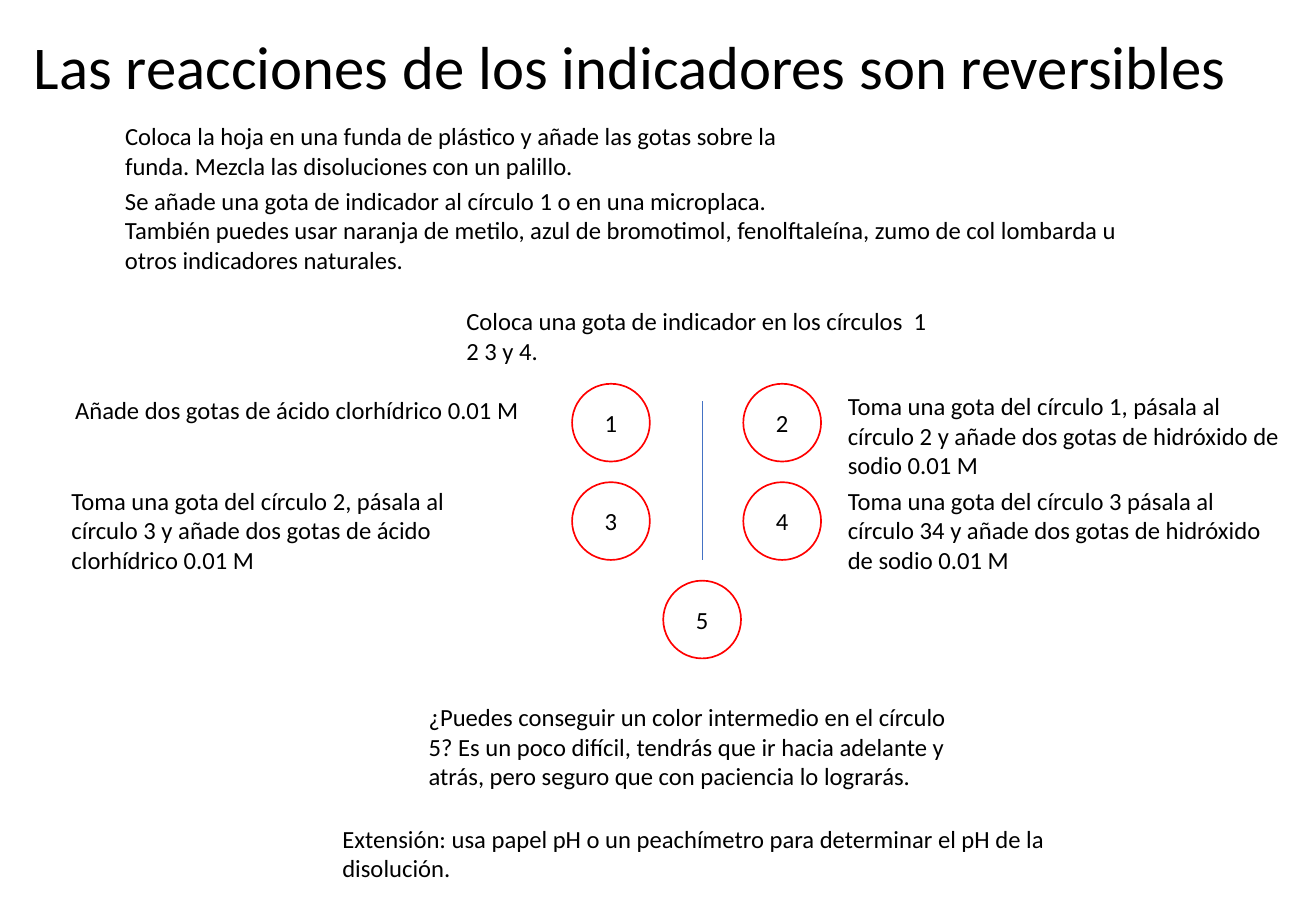
from dataclasses import dataclass

from lxml import etree
from pptx import Presentation
from pptx.dml.color import RGBColor
from pptx.enum.shapes import MSO_CONNECTOR, MSO_SHAPE
from pptx.enum.text import MSO_ANCHOR, PP_ALIGN
from pptx.oxml.ns import qn
from pptx.slide import Slide
from pptx.text.text import TextFrame
from pptx.util import Pt

LINE = MSO_CONNECTOR.STRAIGHT
OVAL = MSO_SHAPE.OVAL
MIDDLE, TOP = MSO_ANCHOR.MIDDLE, MSO_ANCHOR.TOP
CENTER, LEFT = PP_ALIGN.CENTER, PP_ALIGN.LEFT


@dataclass(frozen=True)
class Theme:
    font: str = "Calibri"
    title: float = 36
    body: float = 14.6
    ink: RGBColor = RGBColor(0, 0, 0)
    paper: RGBColor = RGBColor(255, 255, 255)
    ring: RGBColor = RGBColor(255, 0, 0)
    rule: RGBColor = RGBColor(0x44, 0x72, 0xC4)


@dataclass(frozen=True)
class Note:
    left: float
    top: float
    width: float
    height: float
    lines: tuple[str, ...]


@dataclass(frozen=True)
class Spot:
    label: str
    left: float
    row: int


THEME = Theme()
SIZE = 46.1
ROW_TOP, ROW_STEP = 227.5, 58.35
COL_ONE, COL_TWO = 339.1, 440.6
AXIS = 416.2
SIDE = 495.4

TITLE = Note(13, -1.4, 802, 85, ("Las reacciones de los indicadores son reversibles",))
NOTES = (
    Note(67, 106.6, 635.8, 60.5, (
        "Se añade una gota de indicador al círculo 1 o en una microplaca.",
        "También puedes usar naranja de metilo, azul de bromotimol, fenolftaleína, "
        "zumo de col lombarda u otros indicadores naturales.")),
    Note(67, 68.4, 438.5, 42.5, (
        "Coloca la hoja en una funda de plástico y añade las gotas sobre la funda. "
        "Mezcla las disoluciones con un palillo.",)),
    Note(195.8, 484.6, 440.6, 42.5, (
        "Extensión: usa papel pH o un peachímetro para determinar el pH de la disolución.",)),
    Note(37.4, 230.4, 310.3, 25.2, ("Añade dos gotas de ácido clorhídrico 0.01 M",)),
    Note(SIDE, 228.2, 270, 60.5, (
        "Toma una gota del círculo 1, pásala al círculo 2 y añade dos gotas de "
        "hidróxido de sodio 0.01 M",)),
    Note(35.3, 284.4, 270, 60.5, (
        "Toma una gota del círculo 2, pásala al círculo 3 y añade dos gotas de "
        "ácido clorhídrico 0.01 M",)),
    Note(SIDE, 284.4, 270, 60.5, (
        "Toma una gota del círculo 3 pásala al círculo 34 y añade dos gotas de "
        "hidróxido de sodio 0.01 M",)),
    Note(247, 412.6, 333.4, 60.5, (
        "¿Puedes conseguir un color intermedio en el círculo 5? Es un poco difícil, "
        "tendrás que ir hacia adelante y atrás, pero seguro que con paciencia lo lograrás.",)),
    Note(269.3, 177.8, 293.8, 42.5, (
        "Coloca una gota de indicador en los círculos  1 2 3 y 4.",)),
)
SPOTS = (
    Spot("1", COL_ONE, 0),
    Spot("2", COL_TWO, 0),
    Spot("3", COL_ONE, 1),
    Spot("4", COL_TWO, 1),
    Spot("5", AXIS - SIZE / 2, 2),
)


def write(frame: TextFrame, lines: tuple[str, ...], size: float,
          align: PP_ALIGN, anchor: MSO_ANCHOR, space: float = 1.0) -> None:
    frame.word_wrap = True
    frame.vertical_anchor = anchor
    frame.text = "\n".join(lines)
    for para in frame.paragraphs:
        para.alignment = align
        para.line_spacing = space
        para.font.name = THEME.font
        para.font.size = Pt(size)
        para.font.color.rgb = THEME.ink


def add_note(slide: Slide, note: Note, size: float = THEME.body,
             anchor: MSO_ANCHOR = TOP, space: float = 1.0) -> None:
    box = slide.shapes.add_textbox(
        Pt(note.left), Pt(note.top), Pt(note.width), Pt(note.height))
    write(box.text_frame, note.lines, size, LEFT, anchor, space)


def add_spot(slide: Slide, spot: Spot) -> None:
    top = ROW_TOP + spot.row * ROW_STEP
    ring = slide.shapes.add_shape(OVAL, Pt(spot.left), Pt(top), Pt(SIZE), Pt(SIZE))
    ring.shadow.inherit = False
    ring.fill.solid()
    ring.fill.fore_color.rgb = THEME.paper
    ring.line.color.rgb = THEME.ring
    ring.line.width = Pt(1)
    write(ring.text_frame, (spot.label,), THEME.body, CENTER, MIDDLE)


def add_axis(slide: Slide) -> None:
    axis = slide.shapes.add_connector(LINE, Pt(AXIS), Pt(331.9), Pt(AXIS), Pt(237.6))
    axis.line.color.rgb = THEME.rule
    axis.line.width = Pt(0.5)
    etree.SubElement(axis.element.spPr, qn("a:effectLst"))


def main() -> None:
    deck = Presentation()
    deck.slide_width, deck.slide_height = Pt(780), Pt(540)
    slide = deck.slides.add_slide(deck.slide_layouts[6])
    add_note(slide, TITLE, THEME.title, MIDDLE, 0.9)
    for note in NOTES:
        add_note(slide, note)
    add_axis(slide)
    for spot in SPOTS:
        add_spot(slide, spot)
    deck.save("out.pptx")


if __name__ == "__main__":
    main()
